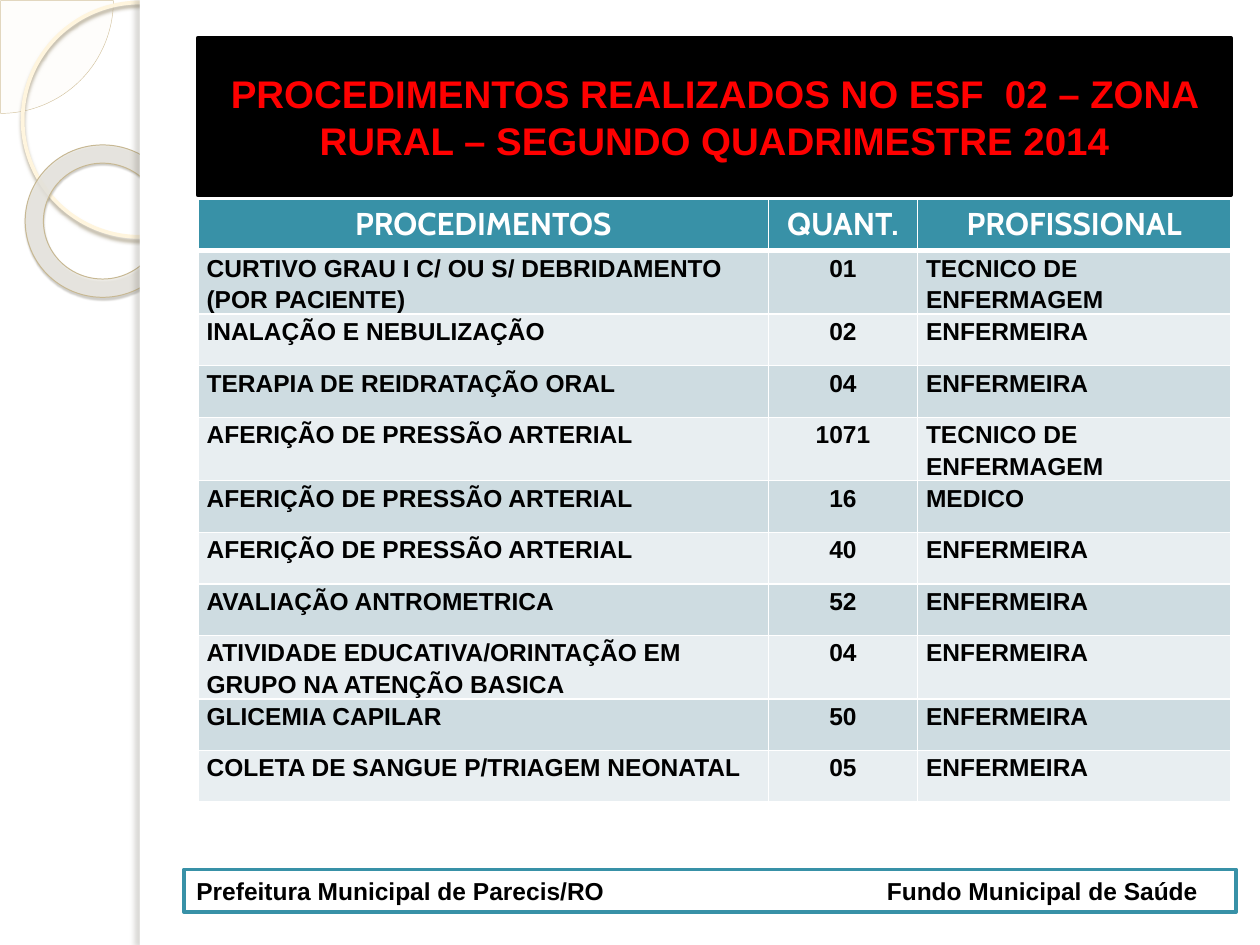
"""Build the slide of procedures performed by the rural ESF 02 team."""
from lxml.etree import SubElement
from pptx import Presentation
from pptx.dml.color import RGBColor
from pptx.enum.shapes import MSO_SHAPE as Shape
from pptx.enum.text import MSO_ANCHOR as Anchor, PP_ALIGN as Align
from pptx.oxml.ns import qn
from pptx.util import Inches, Pt

TITLE = "PROCEDIMENTOS REALIZADOS NO ESF  02 – ZONA RURAL – SEGUNDO QUADRIMESTRE 2014"
FOOTER = "Prefeitura Municipal de Parecis/RO\tFundo Municipal de Saúde"
HEADER = ("PROCEDIMENTOS", "QUANT.", "PROFISSIONAL")
PROCEDURES = [
    ("CURTIVO GRAU I C/ OU S/ DEBRIDAMENTO (POR PACIENTE)", "01", "TECNICO DE ENFERMAGEM"),
    ("INALAÇÃO E NEBULIZAÇÃO", "02", "ENFERMEIRA"),
    ("TERAPIA DE REIDRATAÇÃO ORAL", "04", "ENFERMEIRA"),
    ("AFERIÇÃO DE PRESSÃO ARTERIAL", "1071", "TECNICO DE ENFERMAGEM"),
    ("AFERIÇÃO DE PRESSÃO ARTERIAL", "16", "MEDICO"),
    ("AFERIÇÃO DE PRESSÃO ARTERIAL", "40", "ENFERMEIRA"),
    ("AVALIAÇÃO ANTROMETRICA", "52", "ENFERMEIRA"),
    ("ATIVIDADE EDUCATIVA/ORINTAÇÃO EM GRUPO NA ATENÇÃO BASICA", "04", "ENFERMEIRA"),
    ("GLICEMIA CAPILAR", "50", "ENFERMEIRA"),
    ("COLETA DE SANGUE P/TRIAGEM NEONATAL", "05", "ENFERMEIRA"),
]
COLUMN_WIDTHS = (4.53, 1.18, 2.49)
ROW_HEIGHT = 0.41
FOOTER_TAB = 5.48

THEME = {
    "white": "FFFFFF", "black": "000000", "red": "FF0000", "teal": "3891A7",
    "bands": ("CEDCE1", "E8EEF1"),
    "font": "Arial", "header_font": "Cabin",
    "title_size": 22, "header_size": 18, "body_size": 14,
}
DECORATIONS = [
    dict(kind=Shape.PIE, box=(-0.89, -0.89, 1.79, 1.79), adjust=(0, 54.02),
         fill="FEFAF4", alpha=33, line="D3C39F", width=0.25),
    dict(kind=Shape.OVAL, box=(0.18, 0.02, 1.86, 1.86), line="FFF5DE", width=2.15,
         shadow=("B0A68F", 85, 2, 2, 90)),
    dict(kind=Shape.DONUT, box=(0.2, 1.15, 1.23, 1.21), adjust=(0.12,),
         fill="EBE9E3", alpha=80, line="C7B893", width=0.58,
         shadow=("5A5444", 35, 1, 1.2, 75)),
    dict(kind=Shape.RECTANGLE, box=(1.11, 0, 0.08, 7.5), fill="FFFFFF",
         shadow=("736F63", 25, 3, 3, 180)),
    dict(kind=Shape.RECTANGLE, box=(1.11, 0, 8.89, 7.5), fill="FFFFFF"),
]


def rgb(value):
    return RGBColor.from_string(value)


def add_colour(parent, value, alpha=100):
    colour = SubElement(parent, qn("a:srgbClr"), val=value)
    SubElement(colour, qn("a:alpha"), val=str(alpha * 1000))


def paint(shape, fill=None, line=None, width=1):
    if fill:
        shape.fill.solid()
        shape.fill.fore_color.rgb = rgb(fill)
    else:
        shape.fill.background()
    if line:
        shape.line.color.rgb = rgb(line)
        shape.line.width = Pt(width)
    else:
        shape.line.fill.background()


def add_box(page, kind, box, adjust=(), alpha=100, shadow=None, **colours):
    shape = page.shapes.add_shape(kind, *map(Inches, box))
    for index, value in enumerate(adjust):
        shape.adjustments[index] = value
    paint(shape, **colours)
    shape.shadow.inherit = False
    properties = shape._element.spPr
    if alpha < 100:
        colour = properties.find(qn("a:solidFill")).find(qn("a:srgbClr"))
        SubElement(colour, qn("a:alpha"), val=str(alpha * 1000))
    if shadow:
        value, opacity, blur, distance, angle = shadow
        outer = SubElement(properties.find(qn("a:effectLst")), qn("a:outerShdw"),
                           blurRad=str(Pt(blur)), dist=str(Pt(distance)),
                           dir=str(angle * 60000), algn="tl", rotWithShape="0")
        add_colour(outer, value, opacity)
    return shape


def write(frame, text, size, colour, font=THEME["font"], align=Align.LEFT, spacing=1.0):
    para = frame.paragraphs[0]
    para.alignment = align
    para.line_spacing = spacing
    span = para.add_run()
    span.text = text
    span.font.name = font
    span.font.size = Pt(size)
    span.font.bold = True
    span.font.color.rgb = rgb(colour)
    return para


def set_borders(cell, **widths):
    properties = cell._tc.get_or_add_tcPr()
    for index, side in enumerate(("lnL", "lnR", "lnT", "lnB")):
        edge = properties.makeelement(qn(f"a:{side}"), w=str(Pt(widths.get(side, 1))))
        add_colour(SubElement(edge, qn("a:solidFill")), THEME["white"])
        properties.insert(index, edge)


def add_title(page):
    title = page.shapes.title
    title._element.getparent().append(title._element)
    title.left, title.top, title.width, title.height = map(Inches, (1.57, 0.3, 8.2, 1.25))
    paint(title, THEME["black"], THEME["black"], 2)
    title.text_frame.word_wrap = True
    title.text_frame.vertical_anchor = Anchor.MIDDLE
    write(title.text_frame, TITLE, THEME["title_size"], THEME["red"], align=Align.CENTER)


def add_procedures(page):
    rows = [HEADER, *PROCEDURES]
    table = page.shapes.add_table(
        len(rows), len(HEADER), Inches(1.57), Inches(1.58),
        Inches(sum(COLUMN_WIDTHS)), Inches(ROW_HEIGHT * len(rows))).table
    for column, width in zip(table.columns, COLUMN_WIDTHS):
        column.width = Inches(width)
    for row_index, values in enumerate(rows):
        table.rows[row_index].height = Inches(ROW_HEIGHT)
        for column_index, text in enumerate(values):
            cell = table.cell(row_index, column_index)
            cell.fill.solid()
            if row_index == 0:
                cell.fill.fore_color.rgb = rgb(THEME["teal"])
                write(cell.text_frame, text, THEME["header_size"], THEME["white"],
                      font=THEME["header_font"], align=Align.CENTER)
                set_borders(cell, lnB=3)
                continue
            cell.fill.fore_color.rgb = rgb(THEME["bands"][(row_index - 1) % 2])
            cell.margin_left = cell.margin_right = Inches(0.07)
            cell.margin_top = cell.margin_bottom = 0
            write(cell.text_frame, text, THEME["body_size"], THEME["black"], spacing=1.15,
                  align=Align.CENTER if column_index == 1 else Align.LEFT)
            set_borders(cell, lnT=3 if row_index == 1 else 1)


def add_footer(page):
    footer = add_box(page, Shape.RECTANGLE, (1.46, 6.9, 8.35, 0.34),
                     fill=THEME["white"], line=THEME["teal"], width=2)
    footer.text_frame.word_wrap = True
    footer.text_frame.vertical_anchor = Anchor.MIDDLE
    para = write(footer.text_frame, FOOTER, THEME["body_size"], THEME["black"])
    stops = SubElement(para._p.get_or_add_pPr(), qn("a:tabLst"))
    SubElement(stops, qn("a:tab"), pos=str(Inches(FOOTER_TAB)), algn="l")


def main():
    deck = Presentation()
    deck.slide_width, deck.slide_height = Inches(10), Inches(7.5)
    page = deck.slides.add_slide(deck.slide_layouts[5])
    for decoration in DECORATIONS:
        add_box(page, **decoration)
    add_title(page)
    add_procedures(page)
    add_footer(page)
    deck.save("out.pptx")


if __name__ == "__main__":
    main()
